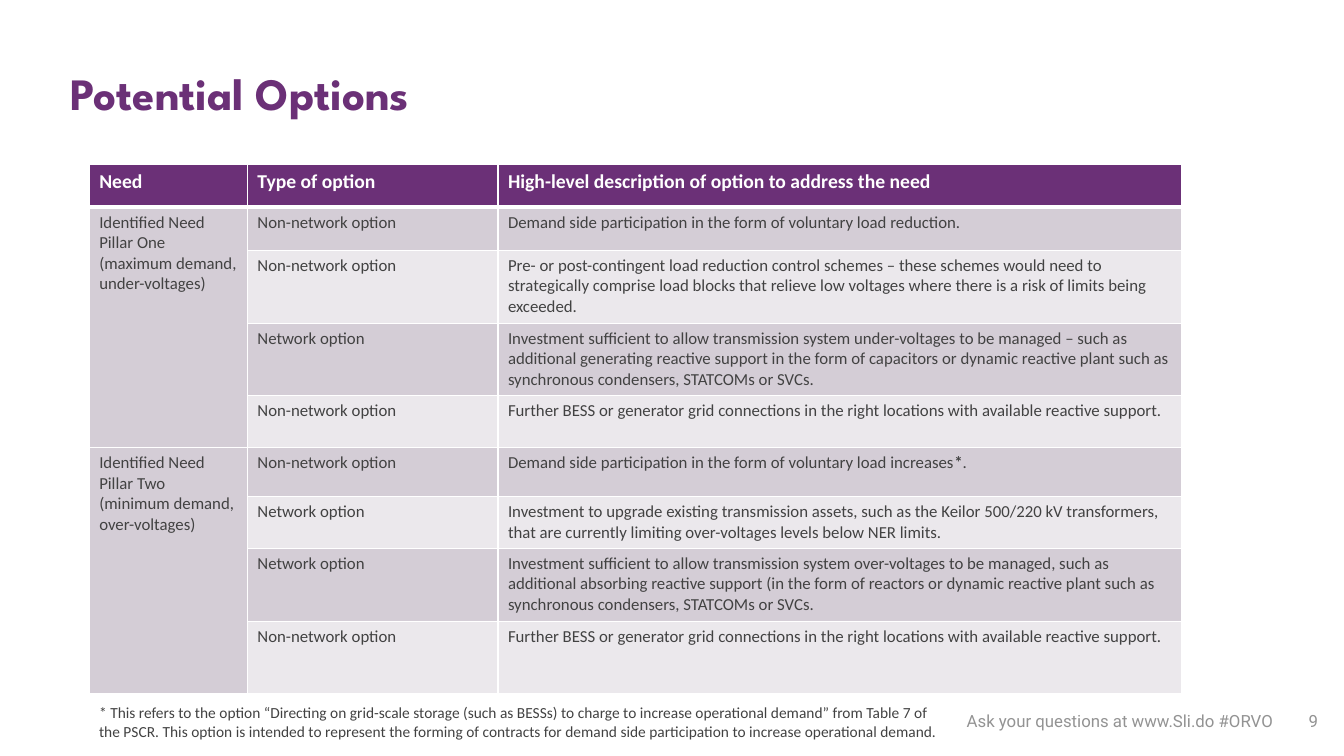
from pptx import Presentation
from pptx.dml.color import RGBColor
from pptx.enum.text import MSO_ANCHOR, MSO_AUTO_SIZE, PP_ALIGN
from pptx.oxml.ns import qn
from pptx.util import Pt
from lxml.etree import SubElement

PURPLE, WHITE, TEXT, GREY = "6B3077", "FFFFFF", "424242", "939393"
BANDS = ["D4CDD6", "EBE8EC"]
COLUMNS = [113, 179, 488.5]
ROW_HEIGHTS = [30.7, 30.7, 52, 52, 37, 35, 37, 52, 52]
HEADERS = ["Need", "Type of option", "High-level description of option to address the need"]
NETWORK, NON_NETWORK = "Network option", "Non-network option"
CONNECTIONS = "Further BESS or generator grid connections in the right locations with available reactive support."
NEEDS = [
    ("Identified Need Pillar One (maximum demand, under-voltages)", [
        (NON_NETWORK, ["Demand side participation in the form of voluntary load reduction."]),
        (NON_NETWORK, ["Pre- or post-contingent load reduction control schemes – these schemes would need to "
                       "strategically comprise load blocks that relieve low voltages where there is a risk of "
                       "limits being exceeded."]),
        (NETWORK, ["Investment sufficient to allow transmission system under-voltages to be managed – such as "
                   "additional generating reactive support in the form of capacitors or dynamic reactive plant "
                   "such as synchronous condensers, STATCOMs or SVCs."]),
        (NON_NETWORK, [CONNECTIONS]),
    ]),
    ("Identified Need Pillar Two (minimum demand, over-voltages)", [
        (NON_NETWORK, ["Demand side participation in the form of voluntary load increases", "*", "."]),
        (NETWORK, ["Investment to upgrade existing transmission assets, such as the Keilor 500/220 kV "
                   "transformers, that are currently limiting over-voltages levels below NER limits."]),
        (NETWORK, ["Investment sufficient to allow transmission system over-voltages to be managed, such as "
                   "additional absorbing reactive support (in the form of reactors or dynamic reactive plant "
                   "such as synchronous condensers, STATCOMs or SVCs."]),
        (NON_NETWORK, [CONNECTIONS]),
    ]),
]
FOOTNOTE = ("* This refers to the option “Directing on grid-scale storage (such as BESSs) to charge to increase "
            "operational demand” from Table 7 of the PSCR. This option is intended to represent the forming of "
            "contracts for demand side participation to increase operational demand.")


def rgb(value):
    return RGBColor.from_string(value)


class SlideBuilder:
    font = "Calibri"

    def __init__(self, prs):
        self.s = prs.slides.add_slide(prs.slide_layouts[5])

    def run(self, p, text, size, color, bold=False, font=None):
        r = p.add_run()
        r.text = text
        r.font.size = Pt(size)
        r.font.name = font or self.font
        r.font.bold = bold
        r.font.color.rgb = rgb(color)

    def title(self, text, left, top, width, height):
        sp = self.s.shapes.title
        sp.left, sp.top, sp.width, sp.height = Pt(left), Pt(top), Pt(width), Pt(height)
        tf = sp.text_frame
        tf.auto_size = MSO_AUTO_SIZE.NONE
        tf.vertical_anchor = MSO_ANCHOR.MIDDLE
        p = tf.paragraphs[0]
        p.alignment = PP_ALIGN.LEFT
        p.line_spacing = 0.9
        self.run(p, text, 32, PURPLE, True, "League Spartan")

    def text(self, text, left, top, width, height, size, color, font=None,
             align=PP_ALIGN.LEFT, anchor=MSO_ANCHOR.TOP):
        tf = self.s.shapes.add_textbox(Pt(left), Pt(top), Pt(width), Pt(height)).text_frame
        tf.word_wrap = True
        tf.vertical_anchor = anchor
        p = tf.paragraphs[0]
        p.alignment = align
        self.run(p, text, size, color, font=font)

    def table(self, left, top, columns, heights):
        frame = self.s.shapes.add_table(len(heights), len(columns), Pt(left), Pt(top),
                                        Pt(sum(columns)), Pt(sum(heights)))
        for column, width in zip(frame.table.columns, columns):
            column.width = Pt(width)
        for row, height in zip(frame.table.rows, heights):
            row.height = Pt(height)
        return frame.table

    def cell(self, cell, runs, fill, size=12, color=TEXT, bold=False, top=1, bottom=1):
        tcPr = cell._tc.get_or_add_tcPr()
        for side, width in zip("LRTB", (1, 1, top, bottom)):
            ln = SubElement(tcPr, qn(f"a:ln{side}"), w=str(Pt(width)))
            SubElement(SubElement(ln, qn("a:solidFill")), qn("a:srgbClr"), val=WHITE)
        cell.fill.solid()
        cell.fill.fore_color.rgb = rgb(fill)
        for text in runs:
            self.run(cell.text_frame.paragraphs[0], text, size, color, bold or text == "*")


def main():
    prs = Presentation()
    prs.slide_width, prs.slide_height = Pt(960), Pt(540)
    slide = SlideBuilder(prs)
    slide.title("Potential Options", 43.2, 44.6, 765.4, 48.2)
    footer = dict(size=12, color=GREY, font="Roboto", anchor=MSO_ANCHOR.MIDDLE)
    slide.text("Ask your questions at www.Sli.do #ORVO", 259.2, 500.4, 657.4, 28.8,
               align=PP_ALIGN.RIGHT, **footer)
    slide.text("9", 916.6, 500.4, 43.2, 28.8, align=PP_ALIGN.CENTER, **footer)

    table = slide.table(63.7, 117.4, COLUMNS, ROW_HEIGHTS)
    for col, header in enumerate(HEADERS):
        slide.cell(table.cell(0, col), [header], PURPLE, 14, WHITE, True, bottom=3)
    row = 1
    for need, options in NEEDS:
        first = row
        for i, (kind, description) in enumerate(options):
            top = 3 if row == 1 else 1
            slide.cell(table.cell(row, 0), [] if i else [need], BANDS[0], top=top)
            slide.cell(table.cell(row, 1), [kind], BANDS[i % 2], top=top)
            slide.cell(table.cell(row, 2), description, BANDS[i % 2], top=top)
            row += 1
        table.cell(first, 0).merge(table.cell(row - 1, 0))

    slide.text(FOOTNOTE, 63.7, 499, 622, 34, 11, TEXT)
    prs.save("out.pptx")


if __name__ == "__main__":
    main()
